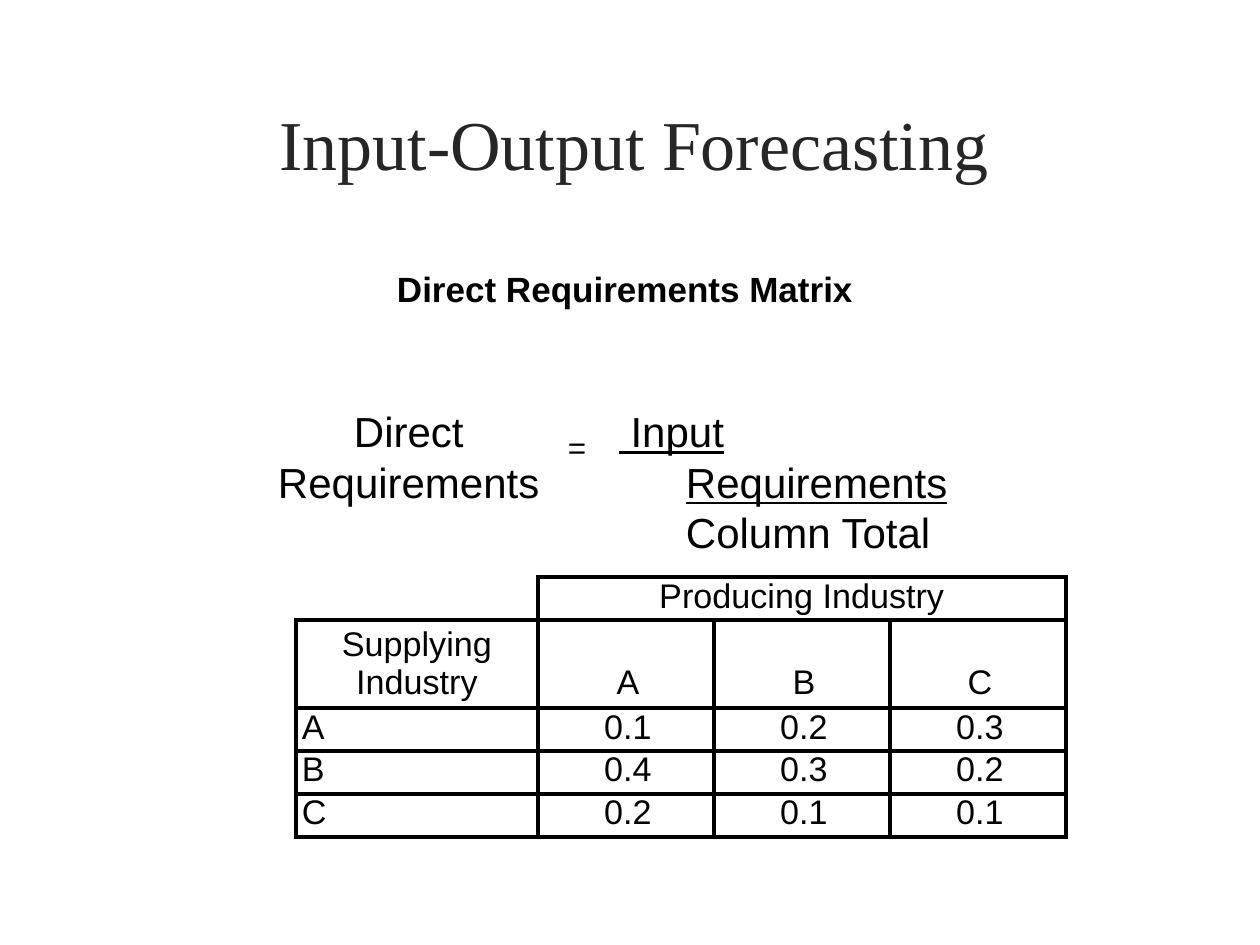
from dataclasses import dataclass

from lxml.etree import SubElement
from pptx import Presentation
from pptx.dml.color import RGBColor
from pptx.enum.text import MSO_ANCHOR as Anchor, PP_ALIGN as Align
from pptx.oxml.ns import qn
from pptx.util import Emu, Pt

EMU_PER_PX = 914400 / 126


@dataclass(frozen=True)
class Theme:
    heading_font: str = "Times New Roman"
    body_font: str = "Arial"
    heading: str = "262626"
    ink: str = "000000"
    title_size: float = 40
    subtitle_size: float = 20
    formula_size: float = 24
    equals_size: float = 18
    table_size: float = 19.5
    border: float = 2.25


THEME = Theme()


def px(value):
    return Emu(round(value * EMU_PER_PX))


def style(paragraph, size, name=THEME.body_font, color=THEME.ink, bold=False):
    font = paragraph.font
    font.name, font.size, font.bold = name, Pt(size), bold
    font.color.rgb = RGBColor.from_string(color)


def add_text(slide, box, size, runs, align=Align.LEFT, anchor=Anchor.TOP,
             margin=0, indent=0, **font):
    frame = slide.shapes.add_textbox(*map(px, box)).text_frame
    frame.word_wrap = True
    frame.vertical_anchor = anchor
    frame.margin_left = frame.margin_right = frame.margin_bottom = 0
    frame.margin_top = px(2)
    paragraph = frame.paragraphs[0]
    paragraph.alignment = align
    properties = paragraph._p.get_or_add_pPr()
    properties.set("marL", str(px(margin)))
    properties.set("indent", str(px(indent)))
    for text, underline in runs:
        run = paragraph.add_run()
        run.text = text
        if underline:
            run.font.underline = True
    style(paragraph, size, **font)


def set_borders(cell, sides):
    properties = cell._tc.get_or_add_tcPr()
    for side in "LRTB":
        line = SubElement(properties, qn(f"a:ln{side}"), w=str(Pt(THEME.border)))
        if side in sides:
            fill = SubElement(line, qn("a:solidFill"))
            SubElement(fill, qn("a:srgbClr"), val=THEME.ink)
        else:
            SubElement(line, qn("a:noFill"))


def fill_cell(cell, text, align, anchor, left=0, bottom=0):
    cell.margin_left, cell.margin_bottom = px(left), px(bottom)
    cell.margin_top = cell.margin_right = 0
    cell.vertical_anchor = anchor
    cell.text = text
    for paragraph in cell.text_frame.paragraphs:
        paragraph.alignment = align
        style(paragraph, THEME.table_size)


def add_matrix(slide, left, top, widths, heights, rows):
    table = slide.shapes.add_table(
        len(rows), len(widths), px(left), px(top),
        px(sum(widths)), px(sum(heights))).table
    table.first_row = table.horz_banding = False
    for column, width in zip(table.columns, widths):
        column.width = px(width)
    for row, height in zip(table.rows, heights):
        row.height = px(height)
    table.cell(0, 1).merge(table.cell(0, len(widths) - 1))
    for r, values in enumerate(rows):
        for c, text in enumerate(values):
            cell = table.cell(r, c)
            set_borders(cell, "RB" if r == c == 0 else "LRTB")
            cell.fill.background()
            if r == 1:
                fill_cell(cell, text, Align.CENTER, Anchor.BOTTOM, 4 if c else 0, 6)
            elif r > 1 and c == 0:
                fill_cell(cell, text, Align.LEFT, Anchor.TOP, 6)
            else:
                fill_cell(cell, text, Align.CENTER, Anchor.TOP, 4 if r else 0)


def main():
    presentation = Presentation()
    presentation.slide_width, presentation.slide_height = px(1260), px(945)
    slide = presentation.slides.add_slide(presentation.slide_layouts[6])

    add_text(slide, (161, 52, 937, 180), THEME.title_size,
             [("Input-Output Forecasting", False)], Align.CENTER, Anchor.MIDDLE,
             margin=9, name=THEME.heading_font, color=THEME.heading)
    add_text(slide, (396, 266, 459, 45), THEME.subtitle_size,
             [("Direct Requirements Matrix", False)], margin=1, bold=True)
    add_matrix(slide, 296, 577, [242] + [176] * 3, [43, 87, 43, 43, 43], [
        ["", "Producing Industry", "", ""],
        ["Supplying\nIndustry", "A", "B", "C"],
        ["A", "0.1", "0.2", "0.3"],
        ["B", "0.4", "0.3", "0.2"],
        ["C", "0.2", "0.1", "0.1"],
    ])
    add_text(slide, (277, 404, 265, 105), THEME.formula_size,
             [("Direct Requirements", False)], margin=1, indent=76)
    add_text(slide, (617, 404, 376, 105), THEME.formula_size,
             [(" Input Requirements", True), (" Column Total", False)],
             margin=69, indent=-67)
    add_text(slide, (567, 426, 22, 42), THEME.equals_size, [("=", False)], margin=1)

    presentation.save("out.pptx")


if __name__ == "__main__":
    main()
